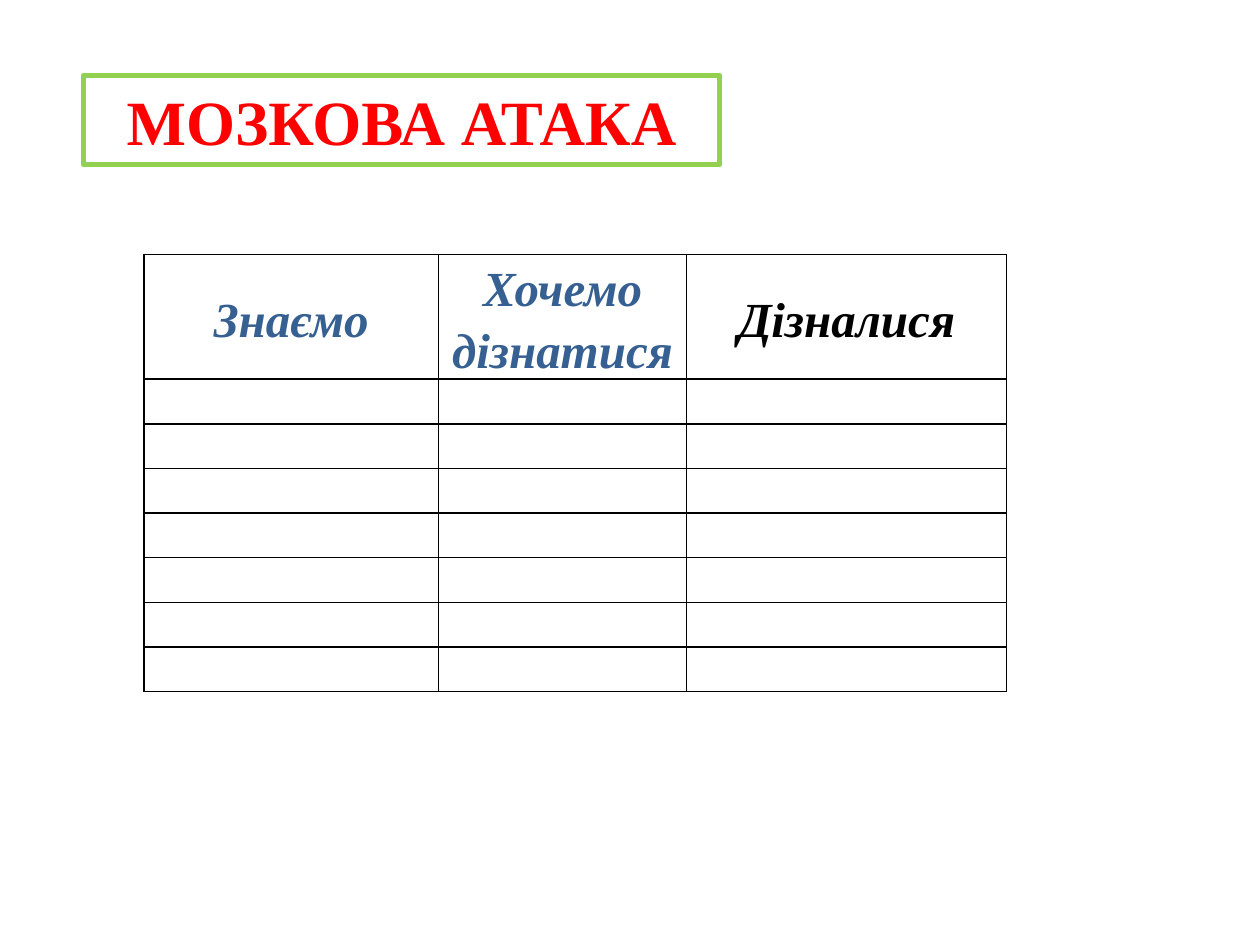
from dataclasses import dataclass

from lxml.etree import SubElement
from pptx import Presentation
from pptx.dml.color import RGBColor as Rgb
from pptx.enum.text import MSO_ANCHOR as Anchor, PP_ALIGN as Align
from pptx.oxml.ns import qn
from pptx.util import Cm, Pt


@dataclass(frozen=True)
class Theme:
    font: str = "Times New Roman"
    title_size: Pt = Pt(36)
    header_size: Pt = Pt(28)
    red: Rgb = Rgb(0xFF, 0x00, 0x00)
    green: Rgb = Rgb(0x92, 0xD0, 0x50)
    blue: Rgb = Rgb(0x37, 0x60, 0x92)
    black: Rgb = Rgb(0x00, 0x00, 0x00)
    white: Rgb = Rgb(0xFF, 0xFF, 0xFF)
    title_line: Pt = Pt(3)
    border: Pt = Pt(1)


theme = Theme()


def add_run(paragraph, text, size, color, italic=False):
    """Add one bold run in the theme font."""
    run = paragraph.add_run()
    run.text = text
    run.font.name = theme.font
    run.font.size = size
    run.font.bold = True
    run.font.italic = italic
    run.font.color.rgb = color


def add_borders(cell):
    properties = cell._tc.get_or_add_tcPr()
    for side in ("a:lnL", "a:lnR", "a:lnT", "a:lnB"):
        line = SubElement(properties, qn(side), w=str(theme.border))
        fill = SubElement(line, qn("a:solidFill"))
        SubElement(fill, qn("a:srgbClr"), val=str(theme.black))


presentation = Presentation()
presentation.slide_width = Cm(25.4)
presentation.slide_height = Cm(19.05)
slide = presentation.slides.add_slide(presentation.slide_layouts[5])

# Framed title
title = slide.shapes.title
title.left, title.top = Cm(1.68), Cm(1.52)
title.width, title.height = Cm(12.83), Cm(1.8)
title.fill.solid()
title.fill.fore_color.rgb = theme.white
title.line.color.rgb = theme.green
title.line.width = theme.title_line
title.text_frame.vertical_anchor = Anchor.MIDDLE
paragraph = title.text_frame.paragraphs[0]
paragraph.alignment = Align.CENTER
add_run(paragraph, "МОЗКОВА АТАКА", theme.title_size, theme.red)

# Table with a header and empty rows to fill in
columns = [
    ("Знаємо", Cm(5.94), theme.blue),
    ("Хочемо дізнатися", Cm(5), theme.blue),
    ("Дізналися", Cm(6.45), theme.black),
]
empty_rows = 7
header_height, row_height = Cm(2.5), Cm(0.9)
table = slide.shapes.add_table(
    empty_rows + 1, len(columns), Cm(2.9), Cm(5.13),
    sum(width for _, width, _ in columns),
    header_height + empty_rows * row_height,
).table
table.first_row = False
table.horz_banding = False

for row in table.rows:
    row.height = row_height
table.rows[0].height = header_height

for cell in table.iter_cells():
    cell.margin_left = cell.margin_right = Cm(0.18)
    cell.margin_top = cell.margin_bottom = 0
    cell.vertical_anchor = Anchor.MIDDLE
    add_borders(cell)
    cell.fill.background()

for index, (heading, width, color) in enumerate(columns):
    table.columns[index].width = width
    paragraph = table.cell(0, index).text_frame.paragraphs[0]
    paragraph.alignment = Align.CENTER
    paragraph.line_spacing = 1.15
    add_run(paragraph, heading, theme.header_size, color, italic=True)

presentation.save("out.pptx")
